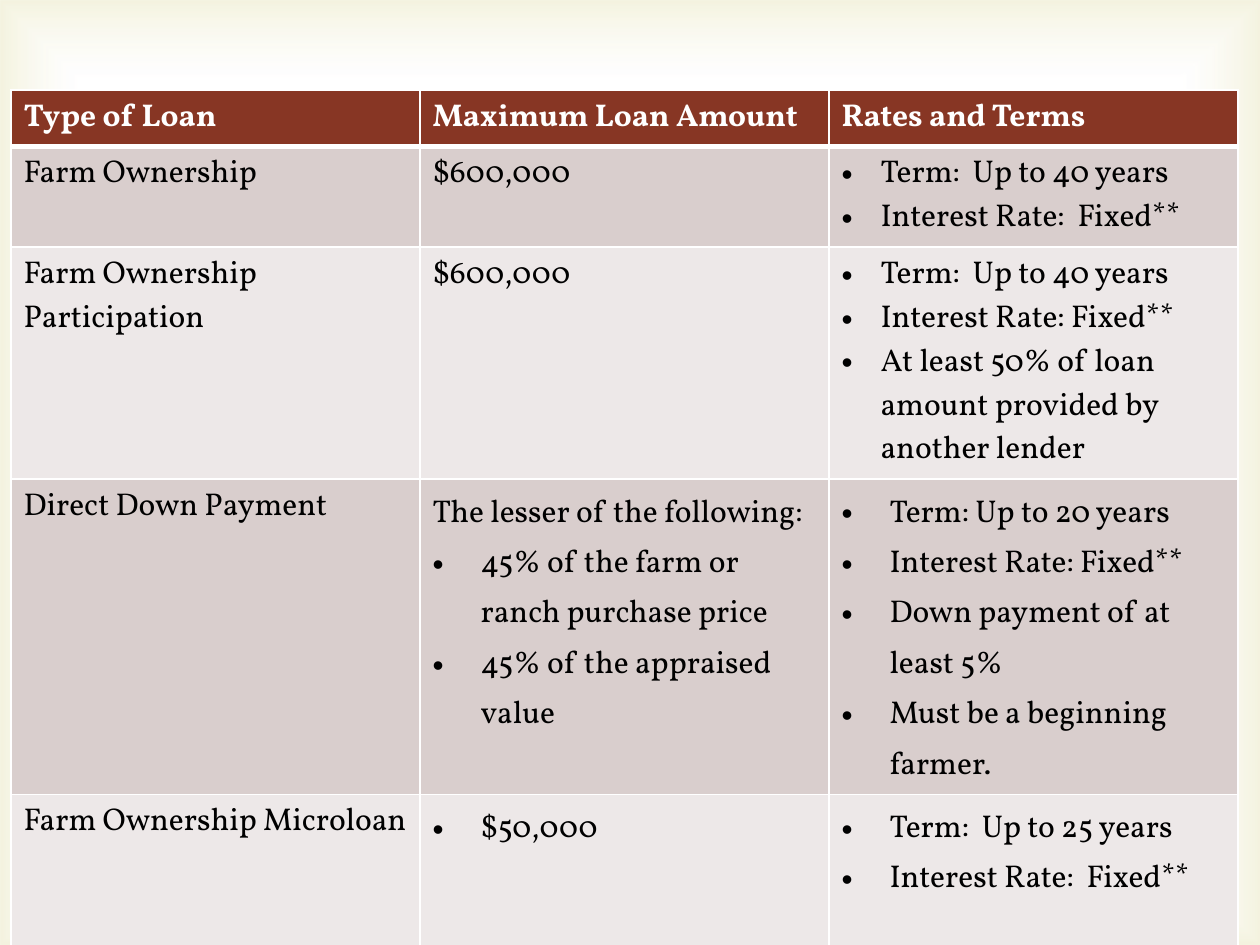
from pptx import Presentation
from pptx.dml.color import RGBColor
from pptx.enum.shapes import MSO_SHAPE
from pptx.oxml import parse_xml
from pptx.oxml.ns import nsdecls
from pptx.util import Emu, Pt

PX = 914400 / 126
FONT = "Vollkorn"
WHITE = RGBColor(0xFF, 0xFF, 0xFF)
BLACK = RGBColor(0x00, 0x00, 0x00)
KHAKI = RGBColor(0xD1, 0xCA, 0x75)
RUST = RGBColor(0x87, 0x36, 0x24)
BANDS = [RGBColor(0xD9, 0xCE, 0xCD), RGBColor(0xED, 0xE8, 0xE8)]


def px(n):
    return Emu(round(n * PX))


def add_text(p, text, color=BLACK, bold=False, indent=0, spacing=None):
    """Fill a paragraph; an indent in px makes it a bullet."""
    r = p.add_run()
    r.text = text
    r.font.name, r.font.size, r.font.bold = FONT, Pt(18), bold
    r.font.color.rgb = color
    if spacing:
        p.line_spacing = spacing
    if indent:
        pPr = p._p.get_or_add_pPr()
        pPr.set("marL", str(px(indent)))
        pPr.set("indent", str(-px(indent)))
        pPr.append(parse_xml(f'<a:buFont {nsdecls("a")} typeface="Arial"/>'))
        pPr.append(parse_xml(f'<a:buChar {nsdecls("a")} char="•"/>'))


prs = Presentation()
prs.slide_width, prs.slide_height = px(1260), px(945)
s = prs.slides.add_slide(prs.slide_layouts[6])

# Soft glow around the slide edge
glow = s.shapes.add_shape(MSO_SHAPE.RECTANGLE, 0, 0, px(1260), px(945))
glow.shadow.inherit = False
glow.line.fill.background()
stops = "".join(
    f'<a:gs pos="{pos}000"><a:srgbClr val="{color}"><a:alpha val="{alpha}000"/></a:srgbClr></a:gs>'
    for pos, color, alpha in [(83, WHITE, 11), (100, KHAKI, 23)])
glow._element.spPr.find("{*}prstGeom").addnext(parse_xml(
    f'<a:gradFill {nsdecls("a")} rotWithShape="1"><a:gsLst>{stops}</a:gsLst><a:path path="rect">'
    '<a:fillToRect l="50000" t="50000" r="50000" b="50000"/></a:path></a:gradFill>'))

# A cell is a list of lines; "• " starts a bullet
ROWS = [
    [["Type of Loan"], ["Maximum Loan Amount"], ["Rates and Terms"]],
    [["Farm Ownership"], ["$600,000"],
     ["• Term:  Up to 40 years", "• Interest Rate:  Fixed**"]],
    [["Farm Ownership Participation"], ["$600,000"],
     ["• Term:  Up to 40 years", "• Interest Rate: Fixed**",
      "• At least 50% of loan amount provided by another lender"]],
    [["Direct Down Payment"],
     ["The lesser of the following:", "• 45% of the farm or ranch purchase price",
      "• 45% of the appraised value"],
     ["• Term: Up to 20 years", "• Interest Rate: Fixed**",
      "• Down payment of at least 5%", "• Must be a beginning farmer."]],
    [["Farm Ownership Microloan"], ["• $50,000"],
     ["• Term:  Up to 25 years", "• Interest Rate:  Fixed**"]],
]
HEIGHTS = [52, 87, 174, 233, 215]
COL_WIDTH = 409

table = s.shapes.add_table(len(ROWS), 3, px(11), px(90),
                           px(3 * COL_WIDTH), px(sum(HEIGHTS))).table
for col in table.columns:
    col.width = px(COL_WIDTH)

for i, (row, height) in enumerate(zip(ROWS, HEIGHTS)):
    table.rows[i].height = px(height)
    header = i == 0
    for j, lines in enumerate(row):
        cell = table.cell(i, j)
        tcPr = cell._tc.get_or_add_tcPr()
        for side in "LRTB":
            thick = (header and side == "B") or (i == 1 and side == "T")
            tcPr.append(parse_xml(
                f'<a:ln{side} {nsdecls("a")} w="{Pt(3 if thick else 1)}"><a:solidFill>'
                f'<a:srgbClr val="{WHITE}"/></a:solidFill></a:ln{side}>'))
        cell.fill.solid()
        cell.fill.fore_color.rgb = RUST if header else BANDS[(i - 1) % 2]
        tf = cell.text_frame
        loose = i >= 3 and j > 0
        for k, line in enumerate(lines):
            p = tf.add_paragraph() if k else tf.paragraphs[0]
            bullet = line.startswith("• ")
            add_text(p, line.removeprefix("• "), color=WHITE if header else BLACK,
                     bold=header, indent=(48 if loose else 39) if bullet else 0,
                     spacing=1.15 if loose else None)

prs.save("out.pptx")
